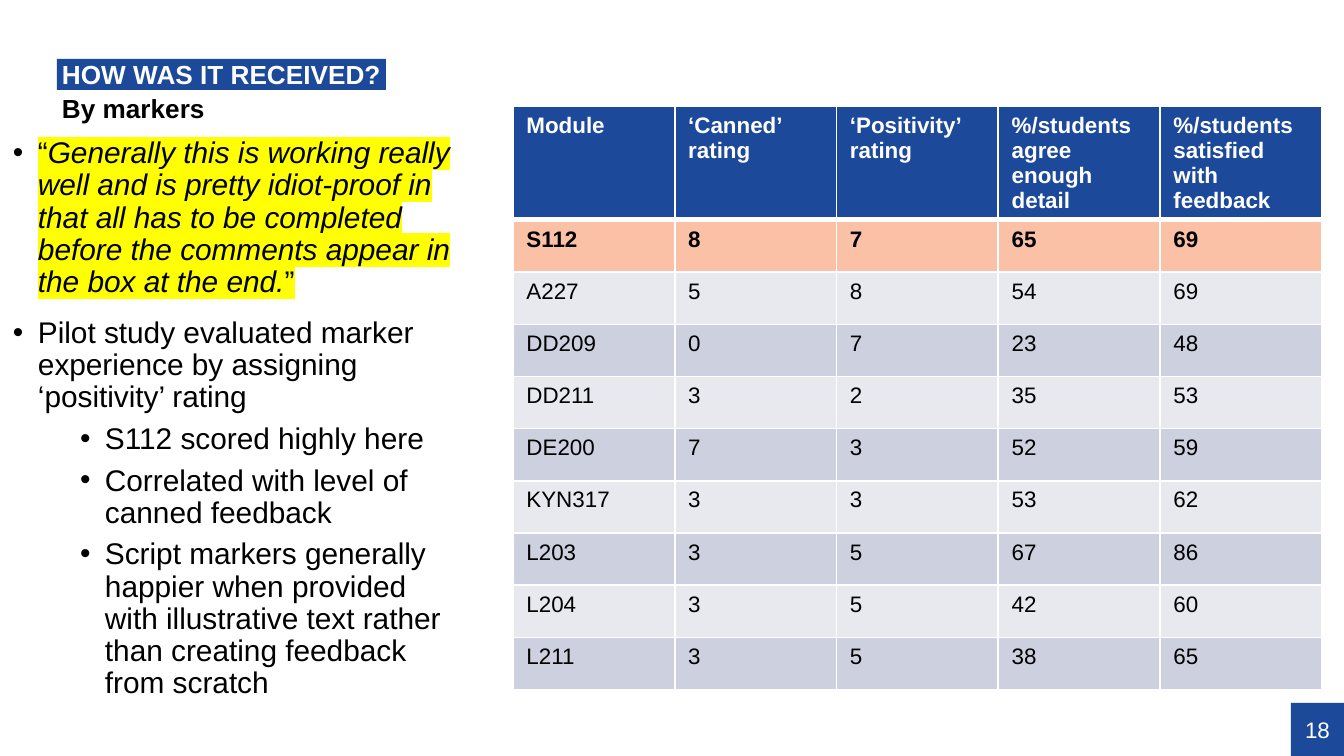
"""Build the slide on how markers received the feedback tool."""
from dataclasses import dataclass

import pptx
import pptx.dml.color
import pptx.enum.shapes
import pptx.enum.text
import pptx.oxml
import pptx.oxml.ns
import pptx.util

RGBColor = pptx.dml.color.RGBColor
MSO_ANCHOR = pptx.enum.text.MSO_ANCHOR
PP_ALIGN = pptx.enum.text.PP_ALIGN

BLUE = RGBColor(0x1D, 0x49, 0x9B)
WHITE = RGBColor(0xFF, 0xFF, 0xFF)
BLACK = RGBColor(0x00, 0x00, 0x00)
YELLOW = RGBColor(0xFF, 0xFF, 0x00)
SALMON = RGBColor(0xFA, 0xC1, 0xA7)
BANDS = (RGBColor(0xE8, 0xE9, 0xEF), RGBColor(0xCD, 0xD0, 0xDE))
FONT = "Arial"
EMU_PER_PX = 914400 / 134.4


@dataclass(frozen=True)
class Box:
    left: int
    top: int
    width: int
    height: int


@dataclass(frozen=True)
class Bullet:
    text: str
    level: int = 0
    space_before: int = 10
    quoted: bool = False


SLIDE = Box(0, 0, 1344, 756)
TITLE = Box(57, 59, 329, 31)
SUBTITLE = Box(57, 90, 1168, 38)
BODY = Box(13, 138, 445, 605)
PAGE_NUMBER = Box(1291, 703, 53, 53)
TABLE = Box(513, 106, 809, 584)
HEADER_HEIGHT = 114
BULLET_INDENT = 25
LEVEL_INDENT = 67

BULLETS = (
    Bullet("Generally this is working really well and is pretty idiot-proof in that all has "
           "to be completed before the comments appear in the box at the end.",
           space_before=0, quoted=True),
    Bullet("Pilot study evaluated marker experience by assigning ‘positivity’ rating"),
    Bullet("S112 scored highly here", 1, 5),
    Bullet("Correlated with level of canned feedback", 1, 5),
    Bullet("Script markers generally happier when provided with illustrative text rather "
           "than creating feedback from scratch", 1, 5),
)
ROWS = (
    ("Module", "‘Canned’ rating", "‘Positivity’ rating",
     "%/students agree enough detail", "%/students satisfied with feedback"),
    ("S112", "8", "7", "65", "69"),
    ("A227", "5", "8", "54", "69"),
    ("DD209", "0", "7", "23", "48"),
    ("DD211", "3", "2", "35", "53"),
    ("DE200", "7", "3", "52", "59"),
    ("KYN317", "3", "3", "53", "62"),
    ("L203", "3", "5", "67", "86"),
    ("L204", "3", "5", "42", "60"),
    ("L211", "3", "5", "38", "65"),
)


def px(length: float) -> int:
    """Turn px into EMU."""
    return round(length * EMU_PER_PX)


def place(shape, box: Box) -> None:
    """Move and size a shape to a box."""
    shape.left, shape.top = px(box.left), px(box.top)
    shape.width, shape.height = px(box.width), px(box.height)


def set_frame(frame, left: int = 0, top: int = 0, anchor=MSO_ANCHOR.MIDDLE) -> None:
    """Set the insets, anchor and wrapping of a text frame."""
    frame.margin_left, frame.margin_top = px(left), px(top)
    frame.margin_right = frame.margin_bottom = 0
    frame.vertical_anchor = anchor
    frame.word_wrap = True
    frame.auto_size = pptx.enum.text.MSO_AUTO_SIZE.NONE


def add_text(paragraph, text: str, *, size: int, color: RGBColor = BLACK, bold: bool = False,
             italic: bool = False, highlight: RGBColor | None = None,
             align=PP_ALIGN.LEFT, line_spacing: float = 1.0) -> None:
    """Add a formatted run to a paragraph."""
    paragraph.alignment = align
    paragraph.line_spacing = line_spacing
    run = paragraph.add_run()
    run.text = text
    font = run.font
    font.name, font.size, font.bold, font.italic = FONT, pptx.util.Pt(size), bold, italic
    font.color.rgb = color
    if highlight is not None:
        latin = run._r.rPr.find(pptx.oxml.ns.qn("a:latin"))
        latin.addprevious(pptx.oxml.parse_xml(
            f'<a:highlight {pptx.oxml.ns.nsdecls("a")}>'
            f'<a:srgbClr val="{highlight}"/></a:highlight>'))


def add_bullet(paragraph, bullet: Bullet) -> None:
    """Write one bulleted paragraph."""
    paragraph.level = bullet.level
    properties = paragraph._p.get_or_add_pPr()
    properties.set("marL", str(px(BULLET_INDENT + bullet.level * LEVEL_INDENT)))
    properties.set("indent", str(-px(BULLET_INDENT)))
    for element in ('buFont {} typeface="Arial"', 'buChar {} char="•"'):
        properties.append(pptx.oxml.parse_xml(
            f'<a:{element.format(pptx.oxml.ns.nsdecls("a"))}/>'))
    paragraph.space_before = pptx.util.Pt(bullet.space_before)
    if bullet.quoted:
        for text, italic in (("“", False), (bullet.text, True), ("”", False)):
            add_text(paragraph, text, size=16, italic=italic, highlight=YELLOW, line_spacing=0.9)
    else:
        add_text(paragraph, bullet.text, size=16, line_spacing=0.9)


def set_borders(cell, top: int, bottom: int) -> None:
    """Give a cell white borders, with top and bottom widths in points."""
    properties = cell._tc.get_or_add_tcPr()
    for side, width in (("L", 1), ("R", 1), ("T", top), ("B", bottom)):
        properties.append(pptx.oxml.parse_xml(
            f'<a:ln{side} {pptx.oxml.ns.nsdecls("a")} w="{pptx.util.Pt(width)}">'
            f'<a:solidFill><a:srgbClr val="{WHITE}"/></a:solidFill></a:ln{side}>'))


def row_fill(index: int) -> RGBColor:
    """Pick the fill of a table row."""
    return (BLUE, SALMON)[index] if index < 2 else BANDS[index % 2]


def add_ratings_table(slide) -> None:
    """Draw the table of module ratings."""
    table = slide.shapes.add_table(len(ROWS), len(ROWS[0]), px(TABLE.left), px(TABLE.top),
                                   px(TABLE.width), px(TABLE.height)).table
    table.horz_banding = False
    body_height = px((TABLE.height - HEADER_HEIGHT) / (len(ROWS) - 1))
    for row_index, values in enumerate(ROWS):
        table.rows[row_index].height = body_height if row_index else px(HEADER_HEIGHT)
        for column_index, value in enumerate(values):
            cell = table.cell(row_index, column_index)
            set_borders(cell, top=3 if row_index == 1 else 1, bottom=1 if row_index else 3)
            cell.fill.solid()
            cell.fill.fore_color.rgb = row_fill(row_index)
            add_text(cell.text_frame.paragraphs[0], value, size=12, bold=row_index < 2,
                     color=BLACK if row_index else WHITE)


def add_text_box(slide, box: Box):
    """Add an empty text box and return its text frame."""
    return slide.shapes.add_textbox(px(box.left), px(box.top),
                                    px(box.width), px(box.height)).text_frame


def main() -> None:
    """Build and save the presentation."""
    presentation = pptx.Presentation()
    presentation.slide_width, presentation.slide_height = px(SLIDE.width), px(SLIDE.height)
    slide = presentation.slides.add_slide(presentation.slide_layouts[5])

    title = slide.shapes.title
    place(title, TITLE)
    title.fill.solid()
    title.fill.fore_color.rgb = BLUE
    set_frame(title.text_frame, left=5, top=3)
    add_text(title.text_frame.paragraphs[0], "HOW WAS IT RECEIVED?", size=14, color=WHITE,
             bold=True, line_spacing=0.9)

    body = add_text_box(slide, BODY)
    set_frame(body, anchor=MSO_ANCHOR.TOP)
    for index, bullet in enumerate(BULLETS):
        add_bullet(body.add_paragraph() if index else body.paragraphs[0], bullet)

    page_number = slide.shapes.add_shape(pptx.enum.shapes.MSO_SHAPE.RECTANGLE, 0, 0, 0, 0)
    place(page_number, PAGE_NUMBER)
    page_number.shadow.inherit = False
    page_number.fill.solid()
    page_number.fill.fore_color.rgb = BLUE
    page_number.line.fill.background()
    set_frame(page_number.text_frame)
    add_text(page_number.text_frame.paragraphs[0], "18", size=12, color=WHITE,
             align=PP_ALIGN.CENTER)

    subtitle = add_text_box(slide, SUBTITLE)
    set_frame(subtitle, left=5, top=3)
    add_text(subtitle.paragraphs[0], "By markers", size=14, bold=True, line_spacing=0.9)

    add_ratings_table(slide)
    presentation.save("out.pptx")


if __name__ == "__main__":
    main()
